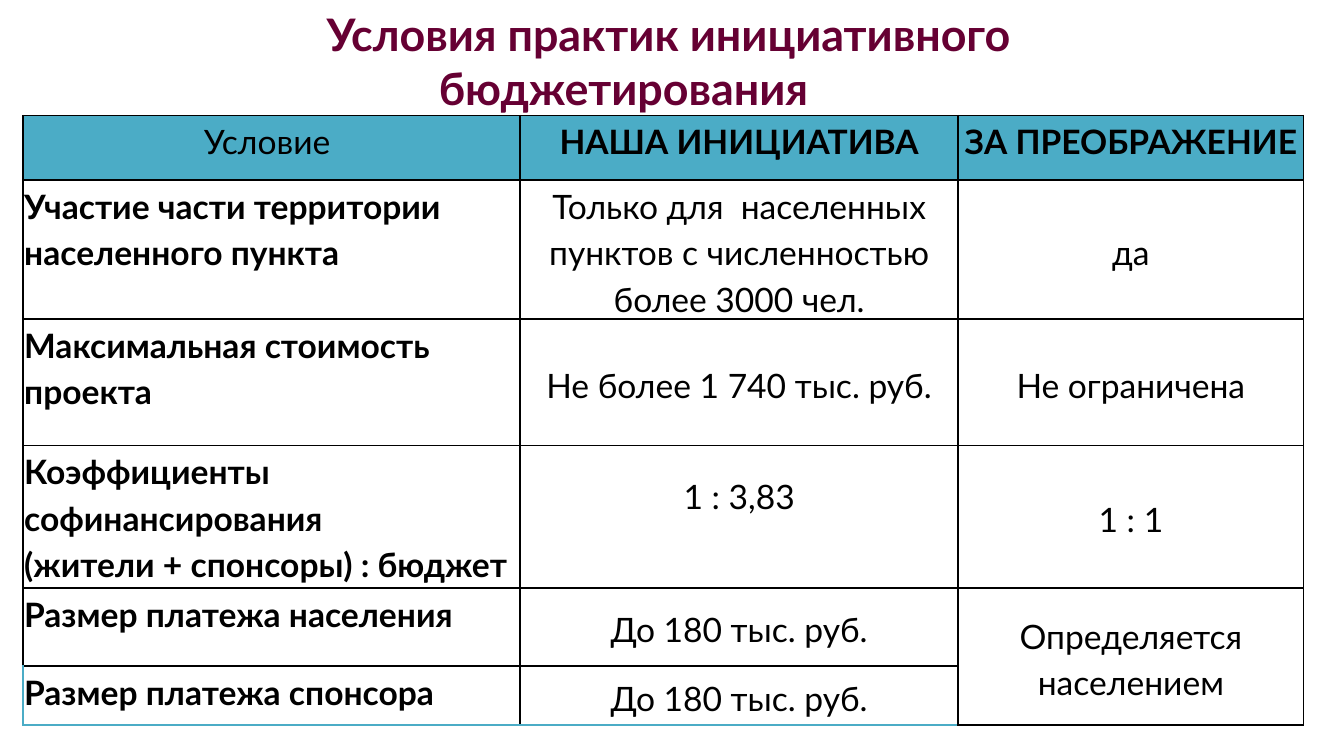
from lxml import etree
from pptx import Presentation
from pptx import util as u
from pptx.dml.color import RGBColor
from pptx.enum import text
from pptx.oxml import ns

BLACK = RGBColor(0x00, 0x00, 0x00)
TEAL = RGBColor(0x4B, 0xAC, 0xC6)
PLUM = RGBColor(0x66, 0x00, 0x33)
CENTER, LEFT = text.PP_ALIGN.CENTER, text.PP_ALIGN.LEFT
TOP, MIDDLE = text.MSO_ANCHOR.TOP, text.MSO_ANCHOR.MIDDLE
LINE_HEIGHT = u.Inches(0.35)
PAGE_WIDTH = u.Inches(10)
PAGE_HEIGHT = PAGE_WIDTH * 9 // 16

TITLE = "Условия практик инициативного бюджетирования "
COLUMNS = (3.7, 3.26, 2.57)
ROWS = (0.48, 0.86, 0.94, 1.06, 0.58, 0.44)
CONDITIONS = (
    ("Условие ", "НАША ИНИЦИАТИВА", "ЗА ПРЕОБРАЖЕНИЕ"),
    ("Участие части территории населенного пункта",
     "Только для  населенных пунктов с численностью более 3000 чел.", "да"),
    ("Максимальная стоимость проекта", "Не более 1 740 тыс. руб.", "Не ограничена"),
    ("Коэффициенты софинансирования\n(жители + спонсоры) : бюджет", "1 : 3,83", "1 : 1"),
    ("Размер платежа населения", "До 180 тыс. руб.", "Определяется населением"),
    ("Размер платежа спонсора", "До 180 тыс. руб.", ""),
)


def apply_format(target, values):
    """Set each named attribute of the target."""
    for name, value in values.items():
        setattr(target, name, value)


def write_text(frame, content, para_format, font_format, color):
    """Fill a text frame and format all its paragraphs."""
    frame.text = content
    for para in frame.paragraphs:
        apply_format(para, para_format)
        for span in para.runs:
            apply_format(span.font, {"name": "Lato", **font_format})
            span.font.color.rgb = color


def draw_borders(cell, colors):
    """Give the cell 1 pt borders, in left, right, top, bottom order."""
    properties = cell._tc.get_or_add_tcPr()
    for index, (side, color) in enumerate(zip("LRTB", colors)):
        line = etree.Element(ns.qn(f"a:ln{side}"), w=str(u.Pt(1)))
        fill = etree.SubElement(line, ns.qn("a:solidFill"))
        etree.SubElement(fill, ns.qn("a:srgbClr"), val=str(color))
        properties.insert(index, line)


def add_title(page, box):
    """Place the page heading, with its first line indented."""
    title = page.shapes.title
    apply_format(title, dict(zip(("left", "top", "width", "height"), box)))
    frame = title.text_frame
    apply_format(frame, {"word_wrap": True, "vertical_anchor": TOP,
                         "auto_size": text.MSO_AUTO_SIZE.NONE})
    write_text(frame, TITLE, {"alignment": CENTER, "line_spacing": 1.0, "space_before": u.Pt(0)},
               {"size": u.Pt(24), "bold": True}, PLUM)
    indent = frame.paragraphs[0]._p.get_or_add_pPr()
    indent.set("marL", "0")
    indent.set("indent", str(u.Inches(0.59)))


def format_cell(cell, row, column, content):
    """Write and style one cell according to its place in the grid."""
    header, label = row == 0, column == 0
    last = row == len(ROWS) - 1
    apply_format(cell, {"margin_left": u.Inches(0.01), "margin_right": u.Inches(0.01),
                        "margin_top": 0, "margin_bottom": 0,
                        "vertical_anchor": TOP if header or label else MIDDLE})
    write_text(cell.text_frame, content,
               {"alignment": LEFT if label and not header else CENTER, "line_spacing": 1.15},
               {"size": u.Pt(18), "bold": header != label}, BLACK)
    if header:
        cell.fill.solid()
        cell.fill.fore_color.rgb = TEAL
    else:
        cell.fill.background()
    draw_borders(cell, (TEAL if last and label else BLACK, BLACK, BLACK,
                        TEAL if last and column < 2 else BLACK))


def add_conditions(page, box):
    """Place the table that compares the two programmes."""
    table = page.shapes.add_table(len(ROWS), len(COLUMNS), *box).table
    apply_format(table, {"first_row": False, "horz_banding": False})
    for column, width in zip(table.columns, COLUMNS):
        column.width = u.Inches(width)
    for row, height in zip(table.rows, ROWS):
        row.height = u.Inches(height)
    for row, contents in enumerate(CONDITIONS):
        for column, content in enumerate(contents):
            format_cell(table.cell(row, column), row, column, content)
    table.cell(3, 1).margin_bottom = LINE_HEIGHT
    table.cell(4, 2).merge(table.cell(5, 2))


def main():
    """Build and save the deck."""
    deck = Presentation()
    apply_format(deck, {"slide_width": PAGE_WIDTH, "slide_height": PAGE_HEIGHT})
    page = deck.slides.add_slide(deck.slide_layouts[5])
    add_title(page, [u.Inches(n) for n in (0.56, 0, 8.24, 0.72)])
    add_conditions(page, [u.Inches(n) for n in (0.17, 0.86, sum(COLUMNS), sum(ROWS))])
    deck.save("out.pptx")


if __name__ == "__main__":
    main()
